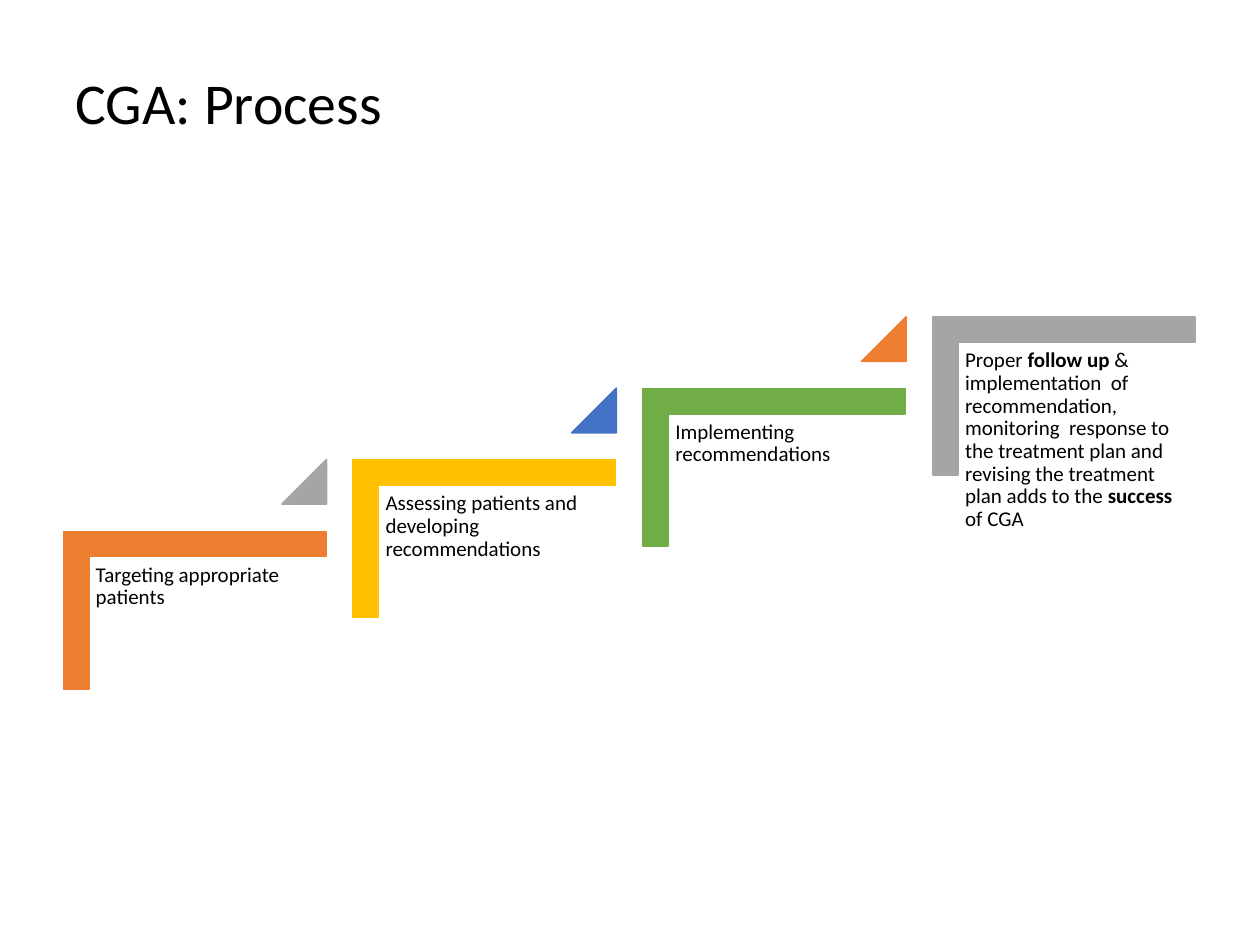
from pptx import Presentation
from pptx.dml.color import RGBColor
from pptx.enum.shapes import MSO_SHAPE
from pptx.enum.text import MSO_ANCHOR, MSO_AUTO_SIZE, PP_ALIGN
from pptx.util import Pt

CORNER = MSO_SHAPE.CORNER
WEDGE = MSO_SHAPE.ISOSCELES_TRIANGLE
MIDDLE, TOP = MSO_ANCHOR.MIDDLE, MSO_ANCHOR.TOP
FIXED = MSO_AUTO_SIZE.NONE
LEFT = PP_ALIGN.LEFT

RUN_X, RISE = 165.6, 40.8
STEPS = [
    ("ED7D31", "A5A5A5", [("Targeting appropriate patients", False)]),
    ("FFC000", "4472C4",
     [("Assessing patients and developing recommendations", False)]),
    ("70AD47", "ED7D31", [("Implementing recommendations", False)]),
    ("A5A5A5", None, [
        ("Proper ", False),
        ("follow up ", True),
        ("& implementation  of recommendation, monitoring  response to "
         "the treatment plan and  revising the treatment plan adds to the ",
         False),
        ("success", True),
        (" of CGA", False),
    ]),
]


def paint(part, hue):
    part.rgb = RGBColor.from_string(hue)


def apply(item, form):
    for name, value in form.items():
        setattr(item, name, value)


def place(left, top, width, height):
    return [Pt(round(n, 2)) for n in (left, top, width, height)]


def write(frame, runs, size, form):
    apply(frame, {"word_wrap": True, "auto_size": FIXED, **form})
    para = frame.paragraphs[0]
    apply(para, {"alignment": LEFT, "line_spacing": 0.9,
                 "space_before": Pt(0)})
    for text, bold in runs:
        run = para.add_run()
        run.text = text
        apply(run.font, {"name": "Calibri", "size": Pt(size), "bold": bold})
        paint(run.font.color, "000000")


def add_title(slide, text):
    title = slide.shapes.title
    left, top, width, height = place(36, 9.4, 594, 102.2)
    apply(title, {"left": left, "top": top,
                  "width": width, "height": height})
    write(title.text_frame, [(text, False)], 33,
          {"vertical_anchor": MIDDLE})


def add_form(slide, kind, box, hue, bends, turn=0):
    shape = slide.shapes.add_shape(kind, *place(*box))
    shape.shadow.inherit = False
    shape.rotation = turn
    for spot, bend in enumerate(bends):
        shape.adjustments[spot] = bend
    shape.fill.solid()
    paint(shape.fill.fore_color, hue)
    paint(shape.line.color, hue)
    shape.line.width = Pt(1)


def add_label(slide, box, runs):
    label = slide.shapes.add_textbox(*place(*box))
    edges = ("left", "top", "right", "bottom")
    form = {f"margin_{edge}": Pt(3.6) for edge in edges}
    write(label.text_frame, runs, 12, {"vertical_anchor": TOP, **form})


def add_step(slide, rank, hue, tip, runs):
    x, y = rank * RUN_X, -rank * RISE
    add_form(slide, CORNER, (66.2 + x, 273.7 + y, 90, 149.9), hue,
             (0.16, 0.16), 90)
    add_label(slide, (51.1 + x, 318.7 + y, 135.4, 118.8), runs)
    if tip:
        add_form(slide, WEDGE, (161.2 + x, 262.7 + y, 25.4, 25.4), tip, (1,))


def main():
    deck = Presentation()
    apply(deck, {"slide_width": Pt(720), "slide_height": Pt(540)})
    slide = deck.slides.add_slide(deck.slide_layouts[5])
    add_title(slide, "CGA: Process")
    for rank, step in enumerate(STEPS):
        add_step(slide, rank, *step)
    deck.save("out.pptx")


if __name__ == "__main__":
    main()
